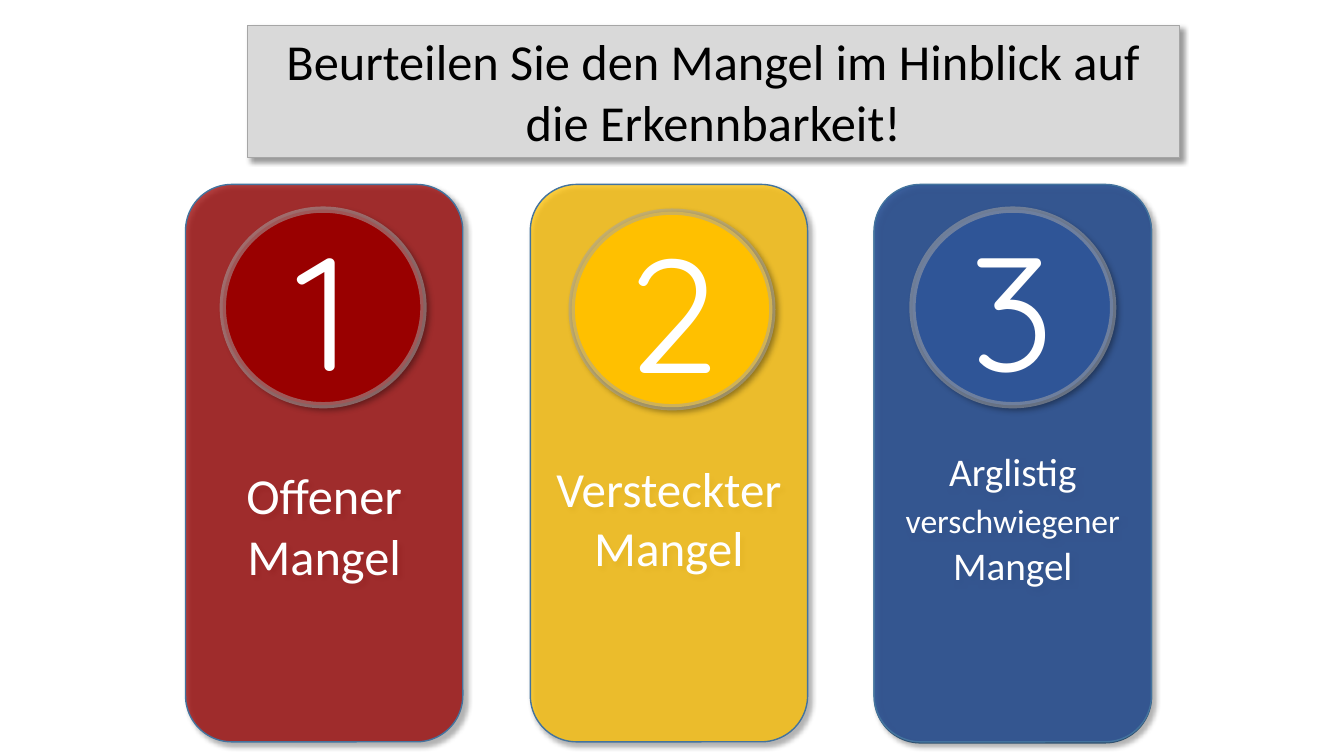
from lxml import etree
from pptx import Presentation
from pptx.dml.color import RGBColor
from pptx.enum.shapes import MSO_SHAPE
from pptx.enum.text import MSO_ANCHOR, MSO_AUTO_SIZE, PP_ALIGN
from pptx.oxml import parse_xml
from pptx.oxml.ns import nsdecls, qn
from pptx.util import Inches, Pt

PANEL_SIZE = (2.75, 5.53)
CIRCLE_SIZE = (1.99, 1.94)
WHITE = "FFFFFF"

# number, colour, panel left, circle left and top, text inset, label spans
DEFECTS = [
    ("3", "2F5597", 8.67, 9.05, 2.08, 1.13,
     [("Arglistig ", 28), ("verschwiegener", 24), (" Mangel", 28)]),
    ("2", "FFC000", 5.26, 5.67, 2.1, 1.13, [("Versteckter Mangel", 35)]),
    ("1", "990000", 1.84, 2.21, 2.08, 1.27, [("Offener Mangel", 36)]),
]


def colour(hex_code):
    return RGBColor.from_string(hex_code)


def set_opacity(color_format_parent, percent):
    """Add an alpha value to the solid colour found below an element."""
    hex_color = color_format_parent.find(".//" + qn("a:srgbClr"))
    etree.SubElement(hex_color, qn("a:alpha")).set("val", str(percent * 1000))


def add_shadow(shape):
    shape.shadow.inherit = False
    effects = shape._element.spPr.find(qn("a:effectLst"))
    effects.append(parse_xml(
        f'<a:outerShdw {nsdecls("a")} blurRad="{Pt(4)}" dist="{Pt(3)}" '
        'dir="2700000" algn="tl" rotWithShape="0">'
        '<a:srgbClr val="000000"><a:alpha val="40000"/></a:srgbClr>'
        '</a:outerShdw>'))


def paint(shape, fill, line, width, fill_opacity=None, line_opacity=None):
    shape.shadow.inherit = False
    shape.fill.solid()
    shape.fill.fore_color.rgb = colour(fill)
    if fill_opacity:
        set_opacity(shape._element.spPr.find(qn("a:solidFill")), fill_opacity)
    shape.line.color.rgb = colour(line)
    shape.line.width = Pt(width)
    if line_opacity:
        set_opacity(shape._element.spPr.find(qn("a:ln")), line_opacity)


def write(shape, spans, font, text_colour, **frame_format):
    """Write one centred paragraph made of (text, size) spans."""
    frame = shape.text_frame
    values = {"word_wrap": True, "vertical_anchor": MSO_ANCHOR.MIDDLE}
    values.update(frame_format)
    for name, value in values.items():
        setattr(frame, name, value)
    para = frame.paragraphs[0]
    para.alignment = PP_ALIGN.CENTER
    for text, size in spans:
        span = para.add_run()
        span.text = text
        span.font.color.rgb = colour(text_colour)
        for name, value in {"name": font, "size": Pt(size)}.items():
            setattr(span.font, name, value)


def add_panel(page, left, top, fill):
    panel = page.shapes.add_shape(
        MSO_SHAPE.ROUNDED_RECTANGLE, Inches(left), Inches(top),
        *map(Inches, PANEL_SIZE))
    paint(panel, fill, "43739E", 1, fill_opacity=75)
    return panel


def add_circle(page, left, top, fill, number):
    circle = page.shapes.add_shape(
        MSO_SHAPE.OVAL, Inches(left), Inches(top), *map(Inches, CIRCLE_SIZE))
    paint(circle, fill, "A6A6A6", 4.5, line_opacity=53)
    add_shadow(circle)
    write(circle, [(number, 115)], "Quicksand", WHITE)


def format_title(title):
    place = {"left": 2.45, "top": 0.25, "width": 9.25, "height": 1.31}
    for name, value in place.items():
        setattr(title, name, Inches(value))
    paint(title, "D9D9D9", "A6A6A6", 0.75)
    add_shadow(title)
    write(title,
          [("Beurteilen Sie den Mangel im Hinblick auf die Erkennbarkeit!", 36)],
          "Calibri", "000000", vertical_anchor=MSO_ANCHOR.TOP,
          auto_size=MSO_AUTO_SIZE.SHAPE_TO_FIT_TEXT)


def main():
    deck = Presentation()
    deck.slide_width, deck.slide_height = Inches(13.33), Inches(7.5)
    page = deck.slides.add_slide(deck.slide_layouts[5])

    # Heading
    format_title(page.shapes.title)

    # Second layer that deepens the blue panel
    add_panel(page, 8.67, 1.84, "2F5597")

    # Panels with their labels and numbered circles
    for number, fill, left, circle_left, circle_top, inset, label in DEFECTS:
        panel = add_panel(page, left, 1.83, fill)
        add_shadow(panel)
        write(panel, label, "Calibri", WHITE, margin_top=Inches(inset))
        add_circle(page, circle_left, circle_top, fill, number)

    deck.save("out.pptx")


if __name__ == "__main__":
    main()
